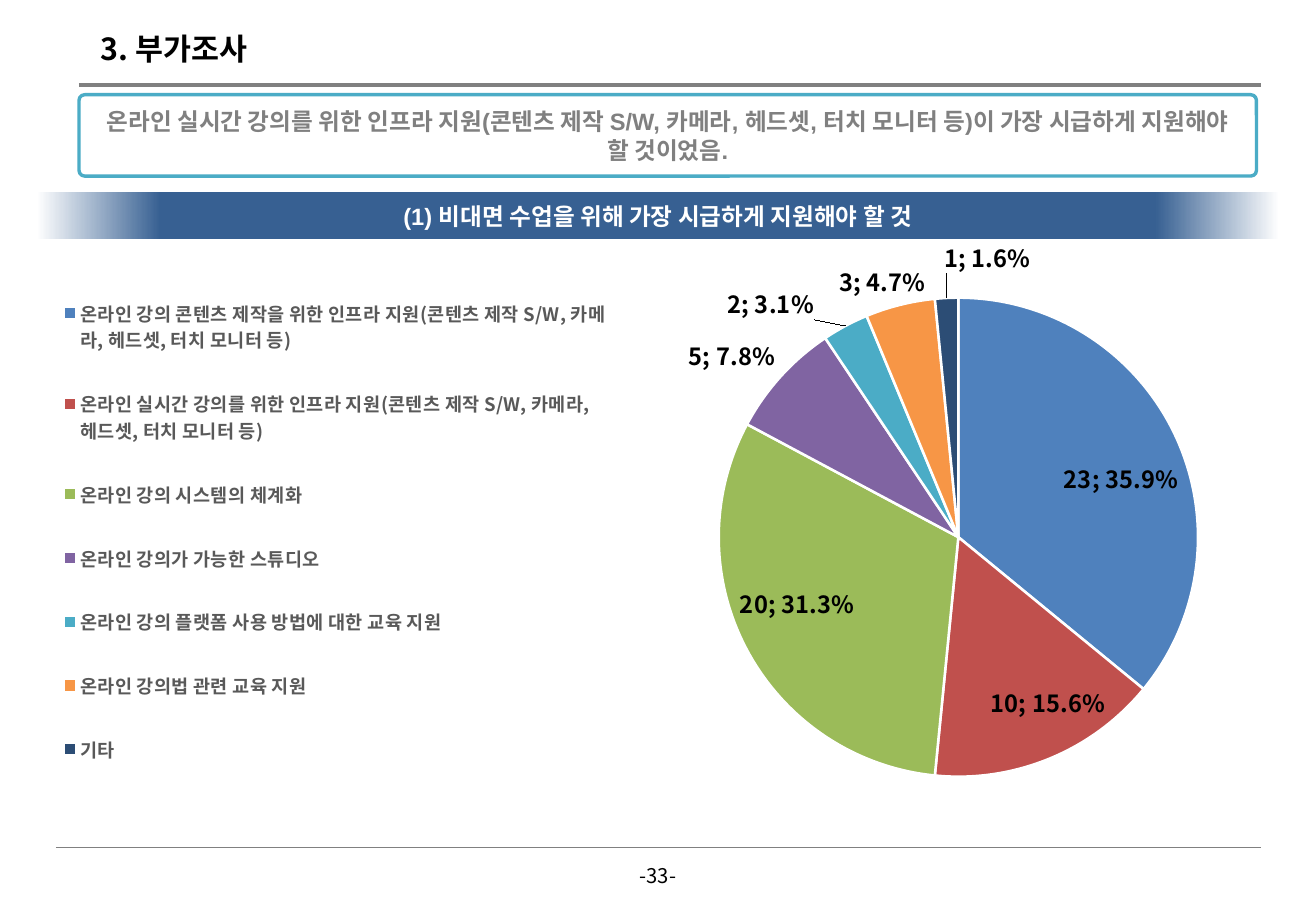
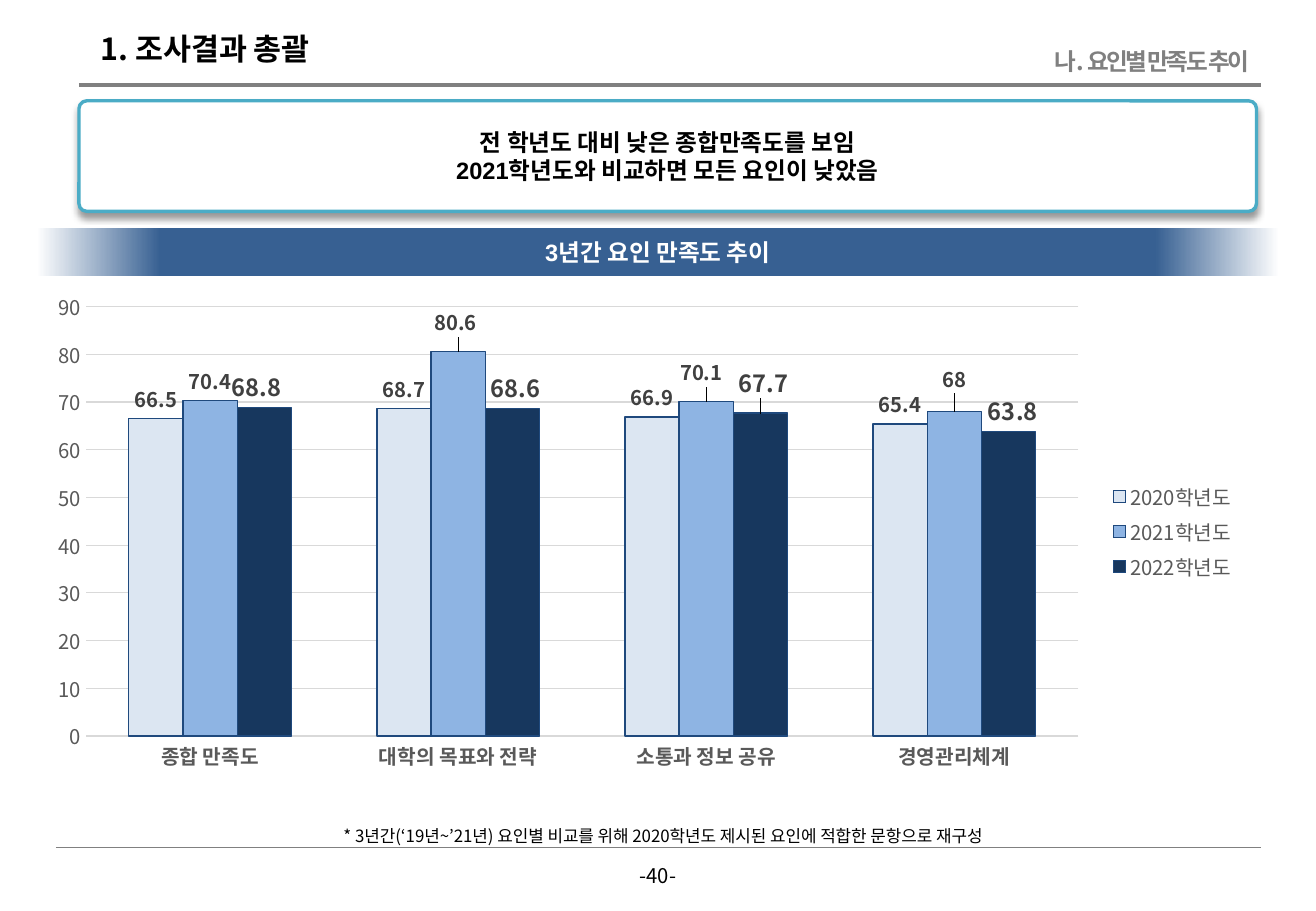
import copy
from dataclasses import dataclass
from typing import Any, Optional

import lxml.etree
import pptx
import pptx.chart.data
import pptx.dml.color
import pptx.enum.chart
import pptx.enum.shapes
import pptx.enum.text
import pptx.oxml
import pptx.oxml.ns
import pptx.util

Inches = pptx.util.Inches
Pt = pptx.util.Pt
RGBColor = pptx.dml.color.RGBColor
qn = pptx.oxml.ns.qn
Align = pptx.enum.text.PP_ALIGN
Anchor = pptx.enum.text.MSO_ANCHOR
Shape = pptx.enum.shapes.MSO_SHAPE
ChartType = pptx.enum.chart.XL_CHART_TYPE
LabelPosition = pptx.enum.chart.XL_LABEL_POSITION
LegendPosition = pptx.enum.chart.XL_LEGEND_POSITION
NO_TICKS = pptx.enum.chart.XL_TICK_MARK.NONE

KOREAN = "Noto Sans CJK KR"
LATIN = "Arial"
WHITE = RGBColor(0xFF, 0xFF, 0xFF)
BLACK = RGBColor(0, 0, 0)
GRAY = RGBColor(0x80, 0x80, 0x80)
LEGEND_GRAY = RGBColor(0x59, 0x59, 0x59)
LABEL_GRAY = RGBColor(0x40, 0x40, 0x40)
GRID_GRAY = RGBColor(0xD9, 0xD9, 0xD9)
TEAL = RGBColor(0x4B, 0xAC, 0xC6)
BAND_BLUE = RGBColor(0x37, 0x60, 0x92)
BAR_EDGE = RGBColor(0x1F, 0x49, 0x7D)
PIE_COLORS = [
    RGBColor(0x4F, 0x81, 0xBD), RGBColor(0xC0, 0x50, 0x4D), RGBColor(0x9B, 0xBB, 0x59),
    RGBColor(0x80, 0x64, 0xA2), TEAL, RGBColor(0xF7, 0x96, 0x46), RGBColor(0x2C, 0x4D, 0x75),
]


@dataclass
class Area:
    """A rectangle in inches."""
    left: float
    top: float
    width: float
    height: float

    def lengths(self) -> list[int]:
        return [Inches(side) for side in (self.left, self.top, self.width, self.height)]


@dataclass
class PageFrame:
    title: str
    number: int
    summary: list[str]
    summary_area: Area
    summary_color: RGBColor
    band: str
    band_top: float
    raised: bool = False


@dataclass
class YearSeries:
    name: str
    values: list[float]
    color: RGBColor
    label_size: float
    nudges: dict[int, tuple[float, float]]
    label_format: Optional[str] = None


PIE_AREA = Area(0.42, 1.97, 10.16, 4.81)
SUPPORT_NEEDS = {
    "온라인 강의 콘텐츠 제작을 위한 인프라 지원(콘텐츠 제작 S/W, 카메라, 헤드셋, 터치 모니터 등)": 23,
    "온라인 실시간 강의를 위한 인프라 지원(콘텐츠 제작 S/W, 카메라, 헤드셋, 터치 모니터 등)": 10,
    "온라인 강의 시스템의 체계화": 20,
    "온라인 강의가 가능한 스튜디오": 5,
    "온라인 강의 플랫폼 사용 방법에 대한 교육 지원": 2,
    "온라인 강의법 관련 교육 지원": 3,
    "기타": 1,
}

BAR_AREA = Area(0.31, 2.32, 9.96, 4.11)
FACTORS = ["종합 만족도", "대학의 목표와 전략", "소통과 정보 공유", "경영관리체계"]
YEARS = [
    YearSeries("2020학년도", [66.5, 68.7, 66.9, 65.4], RGBColor(0xDC, 0xE6, 0xF2), 12, {}),
    YearSeries("2021학년도", [70.4, 80.6, 70.1, 68], RGBColor(0x8E, 0xB4, 0xE3), 12,
               {1: (-0.02, -0.08), 2: (-0.04, -0.08), 3: (0, -0.11)}),
    YearSeries("2022학년도", [68.8, 68.6, 67.7, 63.8], RGBColor(0x17, 0x37, 0x5E), 14,
               {0: (-0.04, 0), 1: (0.05, 0), 2: (0.05, -0.08), 3: (0.06, 0)}, "0.0_ "),
]


def style_font(font: Any, size: float, color: RGBColor, bold: bool = False,
               name: str = KOREAN, spacing: float = 0) -> None:
    font.size = Pt(size)
    font.bold = bold
    font.color.rgb = color
    font.name = name
    lxml.etree.SubElement(font._rPr, qn("a:ea"), typeface=KOREAN)
    if spacing:
        font._rPr.set("spc", str(round(spacing * 100)))


def write(shape: Any, lines: list[str], size: float, color: RGBColor, bold: bool = False,
          name: str = KOREAN, align: Any = Align.CENTER, spacing: float = 0) -> None:
    frame = shape.text_frame
    frame.word_wrap = True
    for index, line in enumerate(lines):
        para = frame.add_paragraph() if index else frame.paragraphs[0]
        para.text = line
        para.alignment = align
        style_font(para.font, size, color, bold, name, spacing)


def add_text(page: Any, area: Area, line: str, size: float, color: RGBColor = BLACK,
             **style: Any) -> None:
    write(page.shapes.add_textbox(*area.lengths()), [line], size, color, **style)


def add_rule(page: Any, left: float, top: float, right: float, weight: float) -> None:
    rule = page.shapes.add_connector(pptx.enum.shapes.MSO_CONNECTOR.STRAIGHT,
                                     Inches(left), Inches(top), Inches(right), Inches(top))
    rule.line.color.rgb = GRAY
    rule.line.width = Pt(weight)
    lxml.etree.SubElement(rule._element.spPr, qn("a:effectLst"))


def add_summary(page: Any, frame: PageFrame) -> None:
    box = page.shapes.add_shape(Shape.ROUNDED_RECTANGLE, *frame.summary_area.lengths())
    box.adjustments[0] = 0.07
    box.fill.solid()
    box.fill.fore_color.rgb = WHITE
    box.line.color.rgb = TEAL
    box.line.width = Pt(2)
    box.shadow.inherit = False
    if frame.raised:
        effects = box._element.spPr.find(qn("a:effectLst"))
        shadow = lxml.etree.SubElement(effects, qn("a:outerShdw"), blurRad=str(Pt(4)),
                                       dist=str(Pt(3)), dir="5400000", rotWithShape="0")
        color = lxml.etree.SubElement(shadow, qn("a:srgbClr"), val=str(BLACK))
        lxml.etree.SubElement(color, qn("a:alpha"), val="40000")
    text = box.text_frame
    text.vertical_anchor = Anchor.MIDDLE
    text.margin_left = text.margin_right = Inches(0.2)
    text.margin_top = text.margin_bottom = Inches(0.04)
    write(box, frame.summary, 14, frame.summary_color, bold=True, name=LATIN)


def add_band(page: Any, top: float, line: str) -> None:
    """Draw the blue heading band that fades to white at both ends."""
    band = page.shapes.add_shape(Shape.RECTANGLE, *Area(0.3, top, 10.23, 0.39).lengths())
    band.shadow.inherit = False
    band.line.fill.background()
    band.fill.gradient()
    band.fill.gradient_angle = 0
    stops = band._element.spPr.find(".//" + qn("a:gsLst"))
    for stop in list(stops):
        stops.remove(stop)
    for percent, color in ((0, WHITE), (10, BAND_BLUE), (90, BAND_BLUE), (100, WHITE)):
        stop = lxml.etree.SubElement(stops, qn("a:gs"), pos=str(percent * 1000))
        lxml.etree.SubElement(stop, qn("a:srgbClr"), val=str(color))
    band.text_frame.vertical_anchor = Anchor.MIDDLE
    write(band, [line], 14, WHITE, bold=True, name=LATIN)


def add_page(deck: Any, frame: PageFrame) -> Any:
    page = deck.slides.add_slide(deck.slide_layouts[6])
    add_rule(page, 0.65, 0.7, 10.38, 2)
    add_rule(page, 0.46, 6.98, 10.38, 0.5)
    add_text(page, Area(0.73, 0.2, 6, 0.4), frame.title, 18, bold=True, align=Align.LEFT)
    add_text(page, Area(5.14, 7.06, 0.55, 0.3), f"-{frame.number}-", 12)
    add_summary(page, frame)
    add_band(page, frame.band_top, frame.band)
    return page


def set_layout(parent: Any, index: int, **values: Any) -> None:
    """Give a chart part a manual layout, as its child at index."""
    for old in parent.findall(qn("c:layout")):
        parent.remove(old)
    layout = lxml.etree.Element(qn("c:layout"))
    manual = lxml.etree.SubElement(layout, qn("c:manualLayout"))
    for tag, value in values.items():
        lxml.etree.SubElement(manual, qn("c:" + tag), val=str(value))
    parent.insert(index, layout)


def set_plot_area(chart: Any, **bounds: float) -> None:
    set_layout(chart._chartSpace.find(".//" + qn("c:plotArea")), 0, layoutTarget="inner",
               xMode="edge", yMode="edge", **bounds)


def nudge_label(labels: Any, point: int, dx: float, dy: float, area: Area) -> None:
    """Move one point's label by inches, keeping the format of its series."""
    series_labels = labels._element
    label = lxml.etree.Element(qn("c:dLbl"))
    lxml.etree.SubElement(label, qn("c:idx"), val=str(point))
    for child in series_labels:
        if child.tag not in (qn("c:dLbl"), qn("c:showLeaderLines")):
            label.append(copy.deepcopy(child))
    set_layout(label, 1, x=dx / area.width, y=dy / area.height)
    series_labels.insert(len(series_labels.findall(qn("c:dLbl"))), label)


def add_chart(page: Any, kind: Any, area: Area, data: Any, legend_position: Any,
              legend_size: float, legend_bold: bool) -> Any:
    chart = page.shapes.add_chart(kind, *area.lengths(), data).chart
    style_font(chart.font, 10, BLACK)
    chart.has_title = False
    chart.has_legend = True
    chart.legend.position = legend_position
    chart.legend.include_in_layout = False
    style_font(chart.legend.font, legend_size, LEGEND_GRAY, legend_bold)
    return chart


def add_support_chart(page: Any) -> None:
    data = pptx.chart.data.CategoryChartData()
    data.categories = list(SUPPORT_NEEDS)
    data.add_series("Series 1", list(SUPPORT_NEEDS.values()))
    chart = add_chart(page, ChartType.PIE, PIE_AREA, data, LegendPosition.LEFT, 11, True)
    set_plot_area(chart, x=0.54, y=0.1, w=0.39, h=0.82)
    set_layout(chart.legend._element, 1, xMode="edge", yMode="edge",
               x=0.01, y=0.04, w=0.44, h=0.92)
    chart.plots[0].vary_by_categories = True
    series = chart.plots[0].series[0]
    for index, color in enumerate(PIE_COLORS):
        look = series.points[index].format
        look.fill.solid()
        look.fill.fore_color.rgb = color
        look.line.color.rgb = WHITE
        look.line.width = Pt(1.5)
    labels = series.data_labels
    labels.show_value = labels.show_percentage = True
    labels.number_format = "0.0%"
    labels.number_format_is_linked = False
    labels.position = LabelPosition.BEST_FIT
    style_font(labels.font, 14, BLACK, bold=True)
    separator = lxml.etree.Element(qn("c:separator"))
    separator.text = "; "
    labels._element.find(qn("c:showBubbleSize")).addnext(separator)
    nudge_label(labels, len(SUPPORT_NEEDS) - 1, 0.34, -0.14, PIE_AREA)


def add_trend_chart(page: Any) -> None:
    data = pptx.chart.data.CategoryChartData()
    data.categories = FACTORS
    for year in YEARS:
        data.add_series(year.name, year.values)
    chart = add_chart(page, ChartType.COLUMN_CLUSTERED, BAR_AREA, data,
                      LegendPosition.RIGHT, 12, False)
    set_plot_area(chart, x=0.04, y=0.05, w=0.82, h=0.86)
    plot = chart.plots[0]
    plot.gap_width = 158
    plot.overlap = 0
    plot.vary_by_categories = False
    for axis, bold in ((chart.category_axis, True), (chart.value_axis, False)):
        axis.major_tick_mark = axis.minor_tick_mark = NO_TICKS
        axis.format.line.fill.background()
        style_font(axis.tick_labels.font, 12, LEGEND_GRAY, bold)
    scale = chart.value_axis
    scale.minimum_scale, scale.maximum_scale, scale.major_unit = 0, 90, 10
    scale.major_gridlines.format.line.color.rgb = GRID_GRAY
    scale.major_gridlines.format.line.width = Pt(0.75)
    for series, year in zip(plot.series, YEARS):
        series.format.fill.solid()
        series.format.fill.fore_color.rgb = year.color
        series.format.line.color.rgb = BAR_EDGE
        series.format.line.width = Pt(0.75)
        labels = series.data_labels
        labels.show_value = True
        labels.position = LabelPosition.OUTSIDE_END
        if year.label_format:
            labels.number_format = year.label_format
            labels.number_format_is_linked = False
        style_font(labels.font, year.label_size, LABEL_GRAY, bold=True)
        for point, (dx, dy) in year.nudges.items():
            nudge_label(labels, point, dx, dy, BAR_AREA)


def main() -> None:
    deck = pptx.Presentation()
    deck.slide_width, deck.slide_height = Inches(10.83), Inches(7.5)

    support = add_page(deck, PageFrame(
        "3. 부가조사", 33,
        ["온라인 실시간 강의를 위한 인프라 지원(콘텐츠 제작 S/W, 카메라, 헤드셋, 터치 모니터 등)이 "
         "가장 시급하게 지원해야 할 것이었음."],
        Area(0.65, 0.78, 9.69, 0.67), GRAY, "(1) 비대면 수업을 위해 가장 시급하게 지원해야 할 것", 1.58))
    add_support_chart(support)

    trend = add_page(deck, PageFrame(
        "1. 조사결과 총괄", 40,
        ["전 학년도 대비 낮은 종합만족도를 보임", "2021학년도와 비교하면 모든 요인이 낮았음"],
        Area(0.65, 0.83, 9.69, 0.91), BLACK, "3년간 요인 만족도 추이", 1.88, raised=True))
    add_text(trend, Area(8.37, 0.34, 2.01, 0.34), "나. 요인별 만족도 추이", 14, GRAY,
             bold=True, align=Align.RIGHT, spacing=-1.5)
    add_text(trend, Area(0.73, 6.75, 9.45, 0.27),
             "* 3년간(‘19년~’21년) 요인별 비교를 위해 2020학년도 제시된 요인에 적합한 문항으로 재구성", 10)
    add_trend_chart(trend)

    deck.save("out.pptx")


if __name__ == "__main__":
    main()
